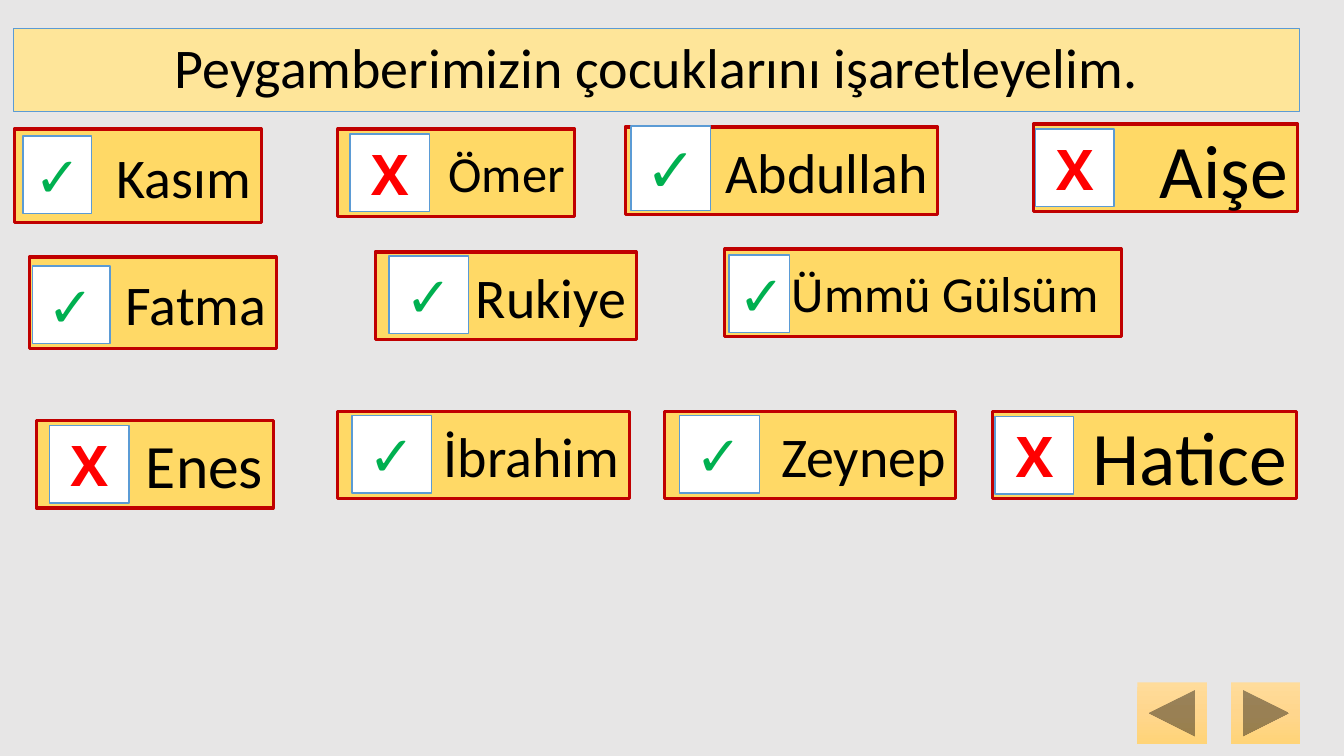
from copy import deepcopy

from pptx import Presentation
from pptx.dml.color import RGBColor
from pptx.enum.shapes import MSO_SHAPE
from pptx.enum.text import MSO_ANCHOR, PP_ALIGN
from pptx.oxml.ns import qn
from pptx.util import Inches, Pt

RECTANGLE = MSO_SHAPE.RECTANGLE
BACK = MSO_SHAPE.ACTION_BUTTON_BACK_OR_PREVIOUS
NEXT = MSO_SHAPE.ACTION_BUTTON_FORWARD_OR_NEXT
MIDDLE = MSO_ANCHOR.MIDDLE
CENTER, RIGHT = PP_ALIGN.CENTER, PP_ALIGN.RIGHT

COLORS = {
    "page": "E7E6E6", "title": "FEE599", "card": "FFD966", "mark": "FFFFFF",
    "red_line": "C00000", "blue_line": "5B9BD5", "text": "000000",
    "✓": "00B050", "X": "FF0000",
    "button_top": "FFDC9B", "button_mid": "FFD68D", "button_end": "FFD478",
}


def color(name):
    return RGBColor.from_string(COLORS[name])


def add_box(page, place, fill, line, width, text, align, font_values):
    box = page.shapes.add_shape(RECTANGLE, *[Inches(value) for value in place])
    box.shadow.inherit = False
    box.fill.solid()
    box.fill.fore_color.rgb = color(fill)
    box.line.color.rgb = color(line)
    box.line.width = Pt(width)
    frame = box.text_frame
    frame.word_wrap = True
    frame.vertical_anchor = MIDDLE
    para = frame.paragraphs[0]
    para.alignment = align
    span = para.add_run()
    span.text = text
    ink = font_values.pop("ink")
    for name, value in font_values.items():
        setattr(span.font, name, value)
    span.font.color.rgb = color(ink)
    return box


deck = Presentation()
deck.slide_width, deck.slide_height = Inches(13.33), Inches(7.5)
page = deck.slides.add_slide(deck.slide_layouts[6])
page.background.fill.solid()
page.background.fill.fore_color.rgb = color("page")

# Title bar
title = add_box(page, (0.13, 0.28, 12.76, 0.83), "title", "blue_line", 0.75,
                "Peygamberimizin çocuklarını işaretleyelim.", CENTER,
                {"name": "Calibri", "size": Pt(40), "ink": "text"})
title.text_frame.paragraphs[0].line_spacing = 0.9

# Name cards: name, text size, card place, mark, mark size, mark place
cards = [
    ("Kasım", 40, (0.14, 1.28, 2.45, 0.93), "✓", 40, (0.23, 1.35, 0.68, 0.77)),
    ("Ömer", 36, (3.35, 1.28, 2.35, 0.87), "X", 40, (3.47, 1.33, 0.79, 0.77)),
    ("Abdullah", 40, (6.2, 1.26, 3.1, 0.87), "✓", 44, (6.26, 1.25, 0.79, 0.84)),
    ("Aişe", 54, (10.25, 1.23, 2.62, 0.87), "X", 40, (10.27, 1.28, 0.78, 0.77)),
    ("Fatma", 40, (0.29, 2.55, 2.45, 0.91), "✓", 40, (0.32, 2.64, 0.77, 0.77)),
    ("Rukiye", 40, (3.72, 2.5, 2.59, 0.87), "✓", 40, (3.86, 2.54, 0.79, 0.77)),
    ("Ümmü Gülsüm", 36, (7.19, 2.47, 3.93, 0.87), "✓", 40, (7.23, 2.53, 0.6, 0.77)),
    ("Enes", 44, (0.36, 4.17, 2.35, 0.87), "X", 40, (0.49, 4.22, 0.79, 0.77)),
    ("İbrahim", 40, (3.35, 4.08, 2.89, 0.87), "✓", 40, (3.49, 4.12, 0.79, 0.77)),
    ("Zeynep", 40, (6.59, 4.08, 2.89, 0.87), "✓", 40, (6.74, 4.12, 0.79, 0.77)),
    ("Hatice", 54, (9.84, 4.08, 3.02, 0.87), "X", 40, (9.87, 4.13, 0.78, 0.77)),
]
for name, size, card_place, mark, mark_size, mark_place in cards:
    card = add_box(page, card_place, "card", "red_line", 2.25, name, RIGHT,
                   {"name": "Calibri", "size": Pt(size), "ink": "text"})
    if name == "Ümmü Gülsüm":
        card.text_frame.margin_right = Inches(0.22)
    add_box(page, mark_place, "mark", "blue_line", 1, mark, CENTER,
            {"name": "Open Sans", "size": Pt(mark_size), "bold": True, "ink": mark})

# Navigation buttons with a three-stop vertical gradient
for kind, left in ((BACK, 11.28), (NEXT, 12.21)):
    button = page.shapes.add_shape(kind, Inches(left), Inches(6.77),
                                   Inches(0.69), Inches(0.61))
    button.shadow.inherit = False
    button.line.fill.background()
    button.fill.gradient()
    button.fill.gradient_angle = 270
    stop_list = button.element.find(".//" + qn("a:gsLst"))
    stop_list.insert(1, deepcopy(stop_list[0]))
    stops = zip(button.fill.gradient_stops, ("button_top", "button_mid", "button_end"))
    for index, (stop, shade) in enumerate(stops):
        stop.position = index / 2
        stop.color.rgb = color(shade)

deck.save("out.pptx")
